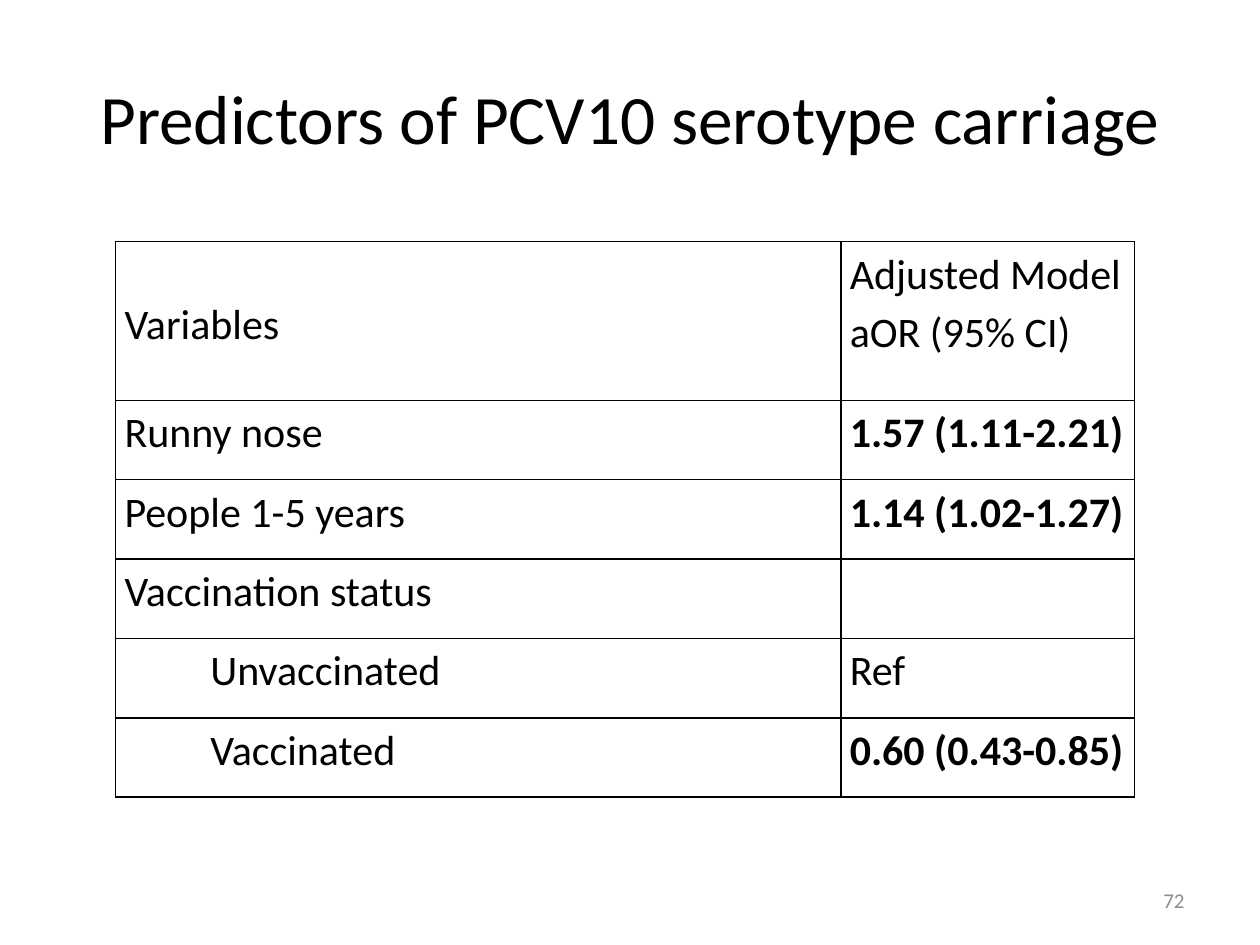
"""Build the slide on predictors of PCV10 serotype carriage."""
from lxml import etree
from pptx import Presentation
from pptx import util as u
from pptx.dml.color import RGBColor
from pptx.enum import text
from pptx.oxml import ns

COLORS = {"ink": "000000", "page_number": "8C8C8C"}
FONT = "Calibri"
COLUMN_WIDTHS = [14.62, 5.92]
HEADER_HEIGHT, ROW_HEIGHT = 3.2, 1.6
CELL_MARGIN, SUBGROUP_INDENT = 0.18, 1.73
ROWS = [
    ("Variables", "Adjusted Model\naOR (95% CI)"),
    ("Runny nose", "1.57 (1.11-2.21)"),
    ("People 1-5 years", "1.14 (1.02-1.27)"),
    ("Vaccination status", ""),
    ("Unvaccinated", "Ref"),
    ("Vaccinated", "0.60 (0.43-0.85)"),
]
SUBGROUPS = {"Unvaccinated", "Vaccinated"}
BOLD_ROWS = {1, 2, 5}


def style(para, size, color="ink", bold=False):
    """Set the font of a whole paragraph."""
    font = para.font
    font.name, font.size, font.bold = FONT, u.Pt(size), bold
    font.color.rgb = RGBColor.from_string(COLORS[color])


def place(shape, left, top, width, height):
    """Move and size a shape in centimetres."""
    shape.left, shape.top = u.Cm(left), u.Cm(top)
    shape.width, shape.height = u.Cm(width), u.Cm(height)


def add_title(page, words):
    """Fill and format the title placeholder."""
    title = page.shapes.title
    place(title, 1.27, 0.76, 22.86, 3.18)
    title.text_frame.text = words
    title.text_frame.vertical_anchor = text.MSO_ANCHOR.MIDDLE
    para = title.text_frame.paragraphs[0]
    para.alignment = text.PP_ALIGN.CENTER
    style(para, 39.6)


def add_borders(cell):
    """Draw a thin line on all four sides of a cell."""
    properties = cell._tc.get_or_add_tcPr()
    for side in ("a:lnL", "a:lnR", "a:lnT", "a:lnB"):
        line = etree.SubElement(properties, ns.qn(side), w=str(u.Pt(1)))
        fill = etree.SubElement(line, ns.qn("a:solidFill"))
        etree.SubElement(fill, ns.qn("a:srgbClr"), val=COLORS["ink"])


def fill_cell(cell, words, bold, anchor):
    """Write and format one table cell."""
    indent = SUBGROUP_INDENT if words in SUBGROUPS else 0
    cell.margin_left = u.Cm(CELL_MARGIN + indent)
    cell.margin_right = u.Cm(CELL_MARGIN)
    cell.margin_top = cell.margin_bottom = 0
    cell.vertical_anchor = anchor
    add_borders(cell)
    cell.fill.background()
    cell.text_frame.text = words
    for para in cell.text_frame.paragraphs:
        para.line_spacing = 1.15
        style(para, 24, bold=bold)


def add_results_table(page):
    """Add the table of adjusted odds ratios."""
    height = HEADER_HEIGHT + ROW_HEIGHT * (len(ROWS) - 1)
    frame = page.shapes.add_table(
        len(ROWS), len(COLUMN_WIDTHS), u.Cm(2.33), u.Cm(4.87),
        u.Cm(sum(COLUMN_WIDTHS)), u.Cm(height))
    table = frame.table
    table.first_row = table.horz_banding = False
    for column, width in zip(table.columns, COLUMN_WIDTHS):
        column.width = u.Cm(width)
    for r, values in enumerate(ROWS):
        table.rows[r].height = u.Cm(ROW_HEIGHT if r else HEADER_HEIGHT)
        for c, words in enumerate(values):
            middle = r == 0 and c == 0
            anchor = text.MSO_ANCHOR.MIDDLE if middle else text.MSO_ANCHOR.TOP
            fill_cell(table.cell(r, c), words, c == 1 and r in BOLD_ROWS, anchor)


def add_page_number(page, number):
    """Add the page number at the lower right."""
    box = page.shapes.add_textbox(u.Cm(18.2), u.Cm(17.65), u.Cm(5.93), u.Cm(1.01))
    frame = box.text_frame
    frame.word_wrap = True
    frame.vertical_anchor = text.MSO_ANCHOR.MIDDLE
    frame.text = number
    para = frame.paragraphs[0]
    para.alignment = text.PP_ALIGN.RIGHT
    style(para, 12, "page_number")


def main():
    """Build and save the deck."""
    deck = Presentation()
    deck.slide_width, deck.slide_height = u.Cm(25.4), u.Cm(19.05)
    page = deck.slides.add_slide(deck.slide_layouts[5])
    add_title(page, "Predictors of PCV10 serotype carriage")
    add_results_table(page)
    add_page_number(page, "72")
    deck.save("out.pptx")


if __name__ == "__main__":
    main()
